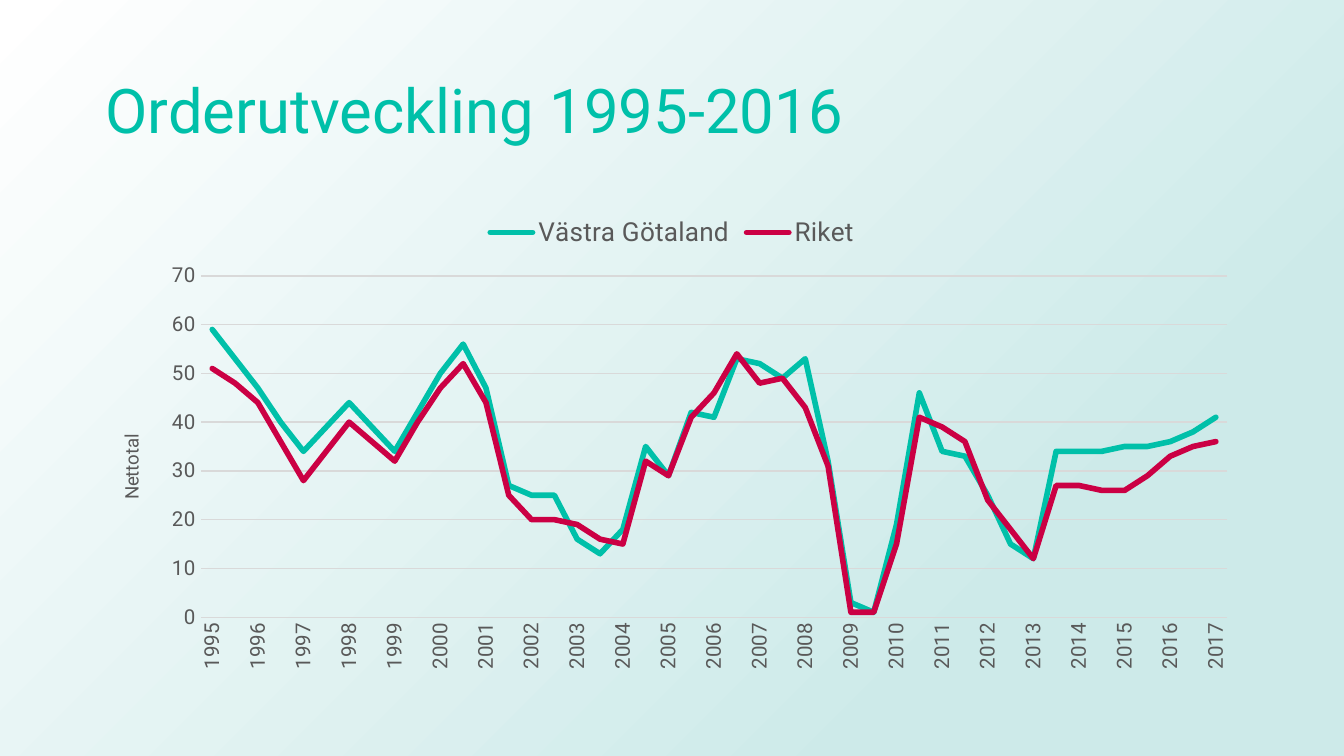
from lxml import etree
from pptx import Presentation
from pptx import util as u
from pptx.chart.data import CategoryChartData
from pptx.dml.color import RGBColor
from pptx.enum import chart as ch, shapes, text
from pptx.oxml import parse_xml
from pptx.oxml.ns import qn

W = u.Inches(10)
H = W * 9 // 16
TEAL = RGBColor(0x00, 0xC0, 0xA9)
RED = RGBColor(0xCB, 0x00, 0x44)
GREY = RGBColor(0x59, 0x59, 0x59)
RULE = RGBColor(0xD9, 0xD9, 0xD9)
MIST = RGBColor(0xCD, 0xEA, 0xE9)
WHITE = RGBColor(0xFF, 0xFF, 0xFF)
FONT = "Roboto"
LEFT, WIDTH = 6.88, 86.25

YEARS = [str(1995 + i // 2) for i in range(45)]
SERIES = [
    ("Västra Götaland", TEAL,
     [59, 53, 47, 40, 34, 39, 44, 39, 34, 42, 50, 56, 47, 27, 25,
      25, 16, 13, 18, 35, 29, 42, 41, 53, 52, 49, 53, 32, 3, 1,
      19, 46, 34, 33, 25, 15, 12, 34, 34, 34, 35, 35, 36, 38, 41]),
    ("Riket", RED,
     [51, 48, 44, 36, 28, 34, 40, 36, 32, 40, 47, 52, 44, 25, 20,
      20, 19, 16, 15, 32, 29, 41, 46, 54, 48, 49, 43, 31, 1, 1,
      15, 41, 39, 36, 24, 18, 12, 27, 27, 26, 26, 29, 33, 35, 36]),
]


def box(x, y, w, h):
    return [round(side * share / 100) for side, share in zip((W, H, W, H), (x, y, w, h))]


def apply(obj, values):
    for name, value in values.items():
        setattr(obj, name, value)


def style_font(font, size, color=GREY):
    apply(font, {"name": FONT, "size": u.Pt(size), "bold": False})
    font.color.rgb = color


def style_line(line, color, width):
    line.color.rgb = color
    line.width = u.Pt(width)


def add_background(s):
    sp = s.shapes.add_shape(shapes.MSO_SHAPE.RECTANGLE, *box(0, 0, 100, 100))
    sp.shadow.inherit = False
    sp.line.fill.background()
    sp.fill.gradient()
    for stop, color, pos in zip(sp.fill.gradient_stops, (MIST, WHITE), (0.23, 1)):
        stop.color.rgb = color
        stop.position = pos
    grad = sp.fill._xPr.find(qn("a:gradFill"))
    grad.remove(grad.find(qn("a:lin")))
    shade = etree.SubElement(grad, qn("a:path"), {"path": "circle"})
    etree.SubElement(shade, qn("a:fillToRect"), {"l": "100000", "t": "100000"})


def add_title(s, words):
    tf = s.shapes.add_textbox(*box(LEFT, 5.32, WIDTH, 19.33)).text_frame
    apply(tf, {"word_wrap": True, "vertical_anchor": text.MSO_ANCHOR.MIDDLE})
    p = tf.paragraphs[0]
    p.line_spacing = 0.9
    r = p.add_run()
    r.text = words
    style_font(r.font, 33, TEAL)


def set_layout(parent, index, modes, shares):
    for old in parent.findall(qn("c:layout")):
        parent.remove(old)
    values = modes | {k: v / 100 for k, v in shares.items()}
    items = "".join(f'<c:{k} val="{v}"/>' for k, v in values.items())
    parent.insert(index, parse_xml(
        '<c:layout xmlns:c="http://schemas.openxmlformats.org/drawingml/2006/chart">'
        f"<c:manualLayout>{items}</c:manualLayout></c:layout>"))


def style_category_axis(axis):
    axis.major_tick_mark = ch.XL_TICK_MARK.NONE
    style_font(axis.tick_labels.font, 11)
    style_line(axis.format.line, RULE, 0.75)
    el = axis._element
    el.find(qn("c:txPr")).find(qn("a:bodyPr")).set("rot", "-5400000")
    skip = etree.Element(qn("c:tickLblSkip"), {"val": "2"})
    el.find(qn("c:noMultiLvlLbl")).addprevious(skip)


def style_value_axis(axis, words):
    apply(axis, {"minimum_scale": 0, "maximum_scale": 70, "major_unit": 10,
                 "major_tick_mark": ch.XL_TICK_MARK.NONE})
    apply(axis.tick_labels, {"number_format": "0", "number_format_is_linked": False})
    style_font(axis.tick_labels.font, 11)
    axis.format.line.fill.background()
    style_line(axis.major_gridlines.format.line, RULE, 0.75)
    tf = axis.axis_title.text_frame
    tf._txBody.find(qn("a:bodyPr")).set("rot", "-5400000")
    r = tf.paragraphs[0].add_run()
    r.text = words
    style_font(r.font, 10)
    set_layout(axis.axis_title._element, 1,
               {"xMode": "edge", "yMode": "edge"}, {"x": 2.05, "y": 48})


def add_order_chart(s):
    data = CategoryChartData(number_format="0")
    data.categories = YEARS
    for name, _, values in SERIES:
        data.add_series(name, values)
    chart = s.shapes.add_chart(
        ch.XL_CHART_TYPE.LINE, *box(LEFT, 26.62, WIDTH, 63.35), data).chart
    apply(chart, {"has_title": False, "has_legend": True})
    apply(chart.legend, {"position": ch.XL_LEGEND_POSITION.TOP,
                         "include_in_layout": False})
    style_font(chart.legend.font, 14)
    for series, (_, color, _) in zip(chart.plots[0].series, SERIES):
        series.smooth = False
        series.marker.style = ch.XL_MARKER_STYLE.NONE
        style_line(series.format.line, color, 3)
        series.format.line._ln.set("cap", "rnd")
    style_category_axis(chart.category_axis)
    style_value_axis(chart.value_axis, "Nettotal")
    set_layout(chart._chartSpace.chart.plotArea, 0,
               {"layoutTarget": "inner", "xMode": "edge", "yMode": "edge"},
               {"x": 9.35, "y": 15.6, "w": 88.55, "h": 71.3})


def main():
    prs = Presentation()
    apply(prs, {"slide_width": W, "slide_height": H})
    s = prs.slides.add_slide(prs.slide_layouts[6])
    add_background(s)
    add_title(s, "Orderutveckling 1995-2016")
    add_order_chart(s)
    prs.save("out.pptx")


if __name__ == "__main__":
    main()
